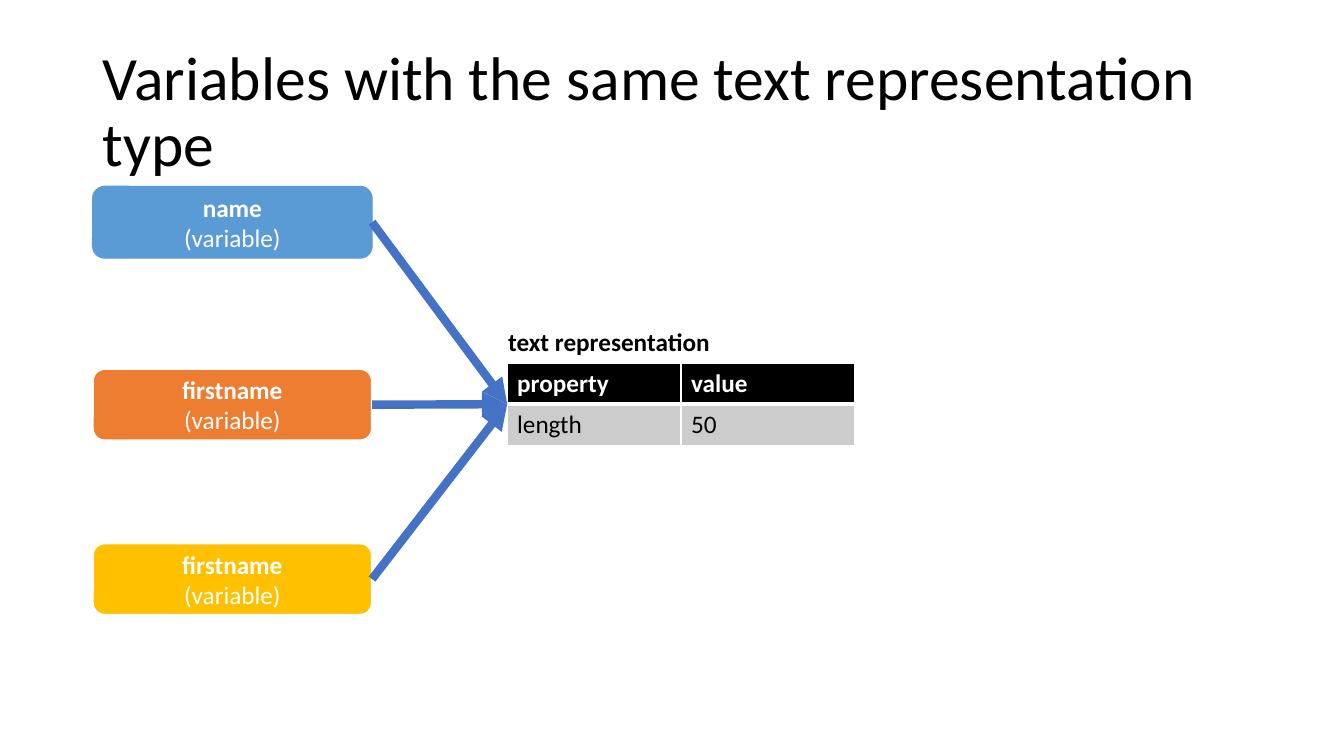
from lxml.etree import SubElement
from pptx import Presentation
from pptx.dml.color import RGBColor
from pptx.enum.shapes import MSO_CONNECTOR, MSO_SHAPE
from pptx.enum.text import MSO_ANCHOR, MSO_AUTO_SIZE, PP_ALIGN
from pptx.oxml.ns import qn
from pptx.util import Inches, Pt

BLACK = RGBColor(0x00, 0x00, 0x00)
WHITE = RGBColor(0xFF, 0xFF, 0xFF)
GREY = RGBColor(0xCC, 0xCC, 0xCC)
BLUE = RGBColor(0x5B, 0x9B, 0xD5)
ORANGE = RGBColor(0xED, 0x7D, 0x31)
GOLD = RGBColor(0xFF, 0xC0, 0x00)
ARROW = RGBColor(0x44, 0x72, 0xC4)
FONT = "Calibri"

TITLE = "Variables with the same text representation type"
VARIABLES = [
    ("name", 1.85, BLUE, BLUE, 1),
    ("firstname", 3.66, ORANGE, WHITE, 1.5),
    ("firstname", 5.39, GOLD, WHITE, 1.5),
]
CAPTION = [["text representation"]]
PROPERTIES = [["property", "value"], ["length", "50"]]

LEFT, BOX_W, BOX_H = 0.92, 2.77, 0.71
TABLE_X, CAPTION_Y, ROW_H = 5.03, 3.2, 0.405
CAPTION_W, PROPERTIES_W = 2.88, 3.45
TARGET_Y = CAPTION_Y + 2 * ROW_H


def set_font(p, size, color, bold=None):
    p.font.name, p.font.size, p.font.bold = FONT, Pt(size), bold
    p.font.color.rgb = color


def add_borders(cell, widths):
    tc_pr = cell._tc.get_or_add_tcPr()
    for side, width in zip("LRTB", widths):
        ln = SubElement(tc_pr, qn(f"a:ln{side}"), w=str(Pt(width)))
        SubElement(SubElement(ln, qn("a:solidFill")), qn("a:srgbClr"), val=str(WHITE))


def add_grid(slide, rows, y, width, fills, colors):
    n_rows, n_cols = len(rows), len(rows[0])
    table = slide.shapes.add_table(n_rows, n_cols, Inches(TABLE_X), Inches(y),
                                   Inches(width), Inches(n_rows * ROW_H)).table
    table.horz_banding = False
    for i, row in enumerate(rows):
        for j, text in enumerate(row):
            cell = table.cell(i, j)
            cell.text = text
            set_font(cell.text_frame.paragraphs[0], 18, colors[i], i == 0)
            add_borders(cell, (1, 1, 3 if i else 1, 1 if i else 3))
            if fills[i] is None:
                cell.fill.background()
            else:
                cell.fill.solid()
                cell.fill.fore_color.rgb = fills[i]
    return table


def add_variable(slide, name, y, fill, line, line_width):
    sp = slide.shapes.add_shape(MSO_SHAPE.ROUNDED_RECTANGLE, Inches(LEFT), Inches(y),
                                Inches(BOX_W), Inches(BOX_H))
    sp.shadow.inherit = False
    sp.fill.solid()
    sp.fill.fore_color.rgb = fill
    sp.line.color.rgb = line
    sp.line.width = Pt(line_width)
    tf = sp.text_frame
    tf.vertical_anchor = MSO_ANCHOR.MIDDLE
    p = tf.paragraphs[0]
    p.alignment = PP_ALIGN.CENTER
    set_font(p, 18, WHITE)
    r = p.add_run()
    r.text, r.font.bold = name, True
    p.add_line_break()
    p.add_run().text = "(variable)"


def add_arrow(slide, y):
    line = slide.shapes.add_connector(MSO_CONNECTOR.STRAIGHT, Inches(LEFT + BOX_W), Inches(y),
                                      Inches(TABLE_X), Inches(TARGET_Y))
    line.line.color.rgb = ARROW
    line.line.width = Pt(6)
    SubElement(line.line._get_or_add_ln(), qn("a:tailEnd"), type="triangle")
    SubElement(line._element.spPr, qn("a:effectLst"))


def main():
    prs = Presentation()
    prs.slide_width, prs.slide_height = Inches(13.33), Inches(7.5)
    slide = prs.slides.add_slide(prs.slide_layouts[5])

    title = slide.shapes.title
    title.left, title.top, title.width, title.height = map(Inches, (LEFT, 0.4, 12.2, 1.45))
    tf = title.text_frame
    tf.text = TITLE
    tf.auto_size, tf.word_wrap = MSO_AUTO_SIZE.NONE, True
    tf.vertical_anchor = MSO_ANCHOR.MIDDLE
    p = tf.paragraphs[0]
    p.alignment, p.line_spacing = PP_ALIGN.LEFT, 0.9
    set_font(p, 44, BLACK)

    caption = add_grid(slide, CAPTION, CAPTION_Y, CAPTION_W, [None], [BLACK])
    caption.cell(0, 0).margin_left = Inches(0.01)
    add_grid(slide, PROPERTIES, CAPTION_Y + ROW_H, PROPERTIES_W, [BLACK, GREY], [WHITE, BLACK])

    for name, y, fill, line, line_width in VARIABLES:
        add_variable(slide, name, y, fill, line, line_width)
        add_arrow(slide, y + BOX_H / 2)

    prs.save("out.pptx")


if __name__ == "__main__":
    main()
